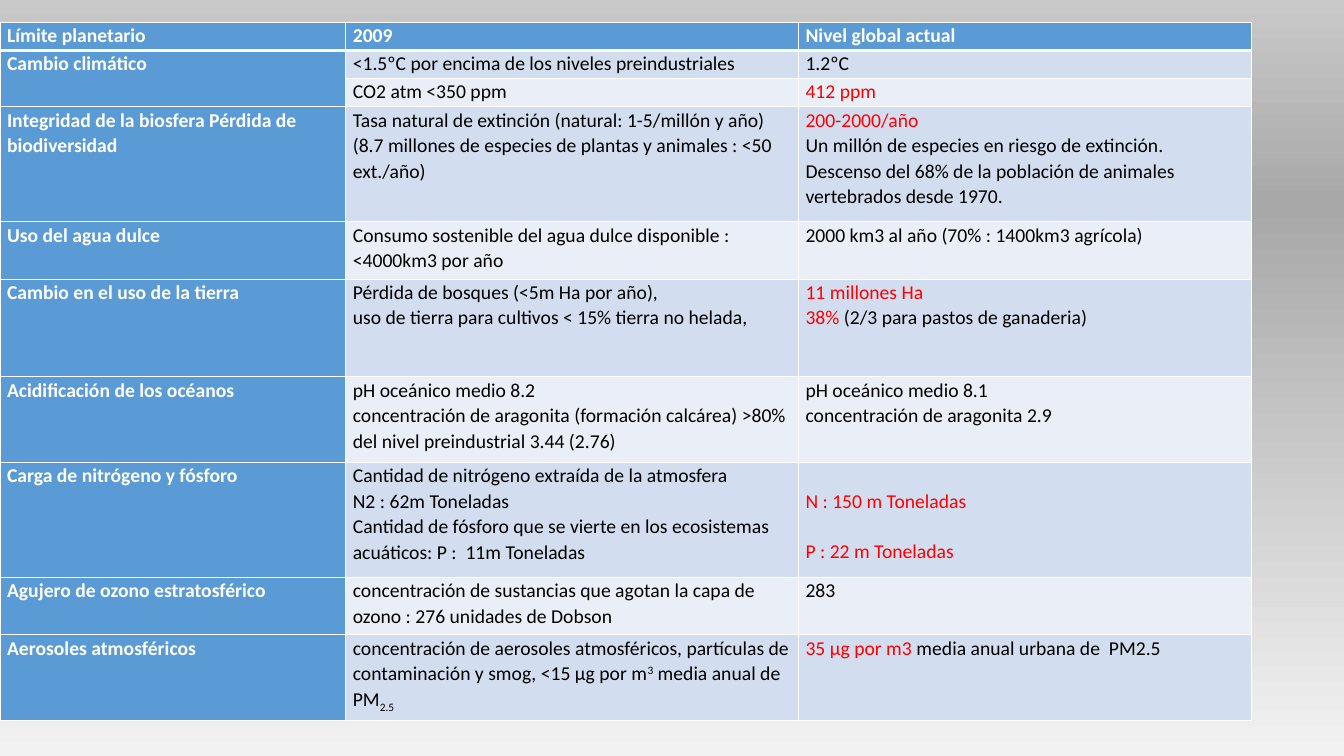
from copy import deepcopy
from dataclasses import dataclass

from lxml.etree import SubElement
from pptx import Presentation
from pptx.dml.color import RGBColor
from pptx.oxml.ns import qn
from pptx.util import Inches, Pt


@dataclass(frozen=True)
class Theme:
    font: str = "Calibri"
    size: int = 14
    line_spacing: float = 1.07
    white: str = "FFFFFF"
    black: str = "000000"
    alert: str = "FF0000"
    header: str = "5B9BD5"
    bands: tuple = ("EAEFF7", "D2DEEF")
    gradient: tuple = ((0, "F2F2F2"), (0.73, "A8A8A8"), (1, "C9C9C9"))
    thin: int = 1
    thick: int = 3


THEME = Theme()
ALERT = {"color": THEME.alert}
SUPERSCRIPT = {"baseline": "30000"}
SUBSCRIPT = {"baseline": "-25000"}

COLUMN_WIDTHS = (3.43, 4.49, 4.49)
ROW_HEIGHTS = (0.28, 0.28, 0.28, 1.14, 0.57, 0.97, 0.85, 1.14, 0.57, 0.85)
NITROGEN_ROW = 7

LIMITS = [
    [["Límite planetario"], ["2009"], ["Nivel global actual"]],
    [["Cambio climático"],
     ["<1.5ºC por encima de los niveles preindustriales"],
     ["1.2ºC"]],
    [[], ["CO2 atm <350 ppm"], [[("412 ppm", ALERT)]]],
    [["Integridad de la biosfera Pérdida de biodiversidad"],
     ["Tasa natural de extinción (natural: 1-5/millón y año)",
      "(8.7 millones de especies de plantas y animales : <50 ext./año)"],
     [[("200-2000/año", ALERT)],
      "Un millón de especies en riesgo de extinción.",
      "Descenso del 68% de la población de animales vertebrados desde 1970."]],
    [["Uso del agua dulce"],
     ["Consumo sostenible del agua dulce disponible : <4000km3 por año"],
     ["2000 km3 al año (70% : 1400km3 agrícola)"]],
    [["Cambio en el uso de la tierra"],
     ["Pérdida de bosques (<5m Ha por año),",
      "uso de tierra para cultivos < 15% tierra no helada,"],
     [[("11 millones Ha", ALERT)],
      [("38%", ALERT), (" (2/3 para pastos de ganaderia)", {})]]],
    [["Acidificación de los océanos"],
     ["pH oceánico medio 8.2",
      "concentración de aragonita (formación calcárea) >80% del nivel preindustrial 3.44 (2.76)"],
     ["pH oceánico medio 8.1", "concentración de aragonita 2.9"]],
    [["Carga de nitrógeno y fósforo"],
     ["Cantidad de nitrógeno extraída de la atmosfera",
      "N2 : 62m Toneladas",
      "Cantidad de fósforo que se vierte en los ecosistemas acuáticos: P :  11m Toneladas"],
     [[("N : 150 m Toneladas", ALERT)], [("P : 22 m Toneladas", ALERT)]]],
    [["Agujero de ozono estratosférico"],
     ["concentración de sustancias que agotan la capa de ozono : 276 unidades de Dobson"],
     ["283"]],
    [["Aerosoles atmosféricos"],
     [[("concentración de aerosoles atmosféricos, partículas de contaminación y smog, <15 μg por m", {}),
       ("3", SUPERSCRIPT), (" media anual de  PM", {}), ("2.5", SUBSCRIPT)]],
     [[("35 μg por m3", ALERT), (" media anual urbana de  PM2.5", {})]]],
]


class SlideBuilder:
    def __init__(self, slide, theme):
        self.slide = slide
        self.theme = theme

    def background(self):
        fill = self.slide.background.fill
        fill.gradient()
        fill.gradient_angle = 90
        stop_list = next(self.slide.element.iter(qn("a:gsLst")))
        stop_list.append(deepcopy(stop_list[0]))
        for stop, (position, color) in zip(fill.gradient_stops, self.theme.gradient):
            stop.position = position
            stop.color.rgb = RGBColor.from_string(color)

    def borders(self, cell, row):
        properties = cell._tc.get_or_add_tcPr()
        thick_side = {0: "lnB", 1: "lnT"}.get(row)
        for side in ("lnL", "lnR", "lnT", "lnB"):
            width = self.theme.thick if side == thick_side else self.theme.thin
            line = SubElement(properties, qn(f"a:{side}"), w=str(Pt(width)))
            solid = SubElement(line, qn("a:solidFill"))
            SubElement(solid, qn("a:srgbClr"), val=self.theme.white)

    def style_font(self, font, color, bold):
        formats = {"name": self.theme.font, "size": Pt(self.theme.size), "bold": bold}
        for name, value in formats.items():
            setattr(font, name, value)
        font.color.rgb = RGBColor.from_string(color)

    def text(self, cell, paragraphs, color, bold):
        frame = cell.text_frame
        for index, content in enumerate(paragraphs):
            paragraph = frame.add_paragraph() if index else frame.paragraphs[0]
            paragraph.line_spacing = self.theme.line_spacing
            runs = [(content, {})] if isinstance(content, str) else content
            for text, style in runs:
                run = paragraph.add_run()
                run.text = text
                self.style_font(run.font, style.get("color", color), bold)
                if "baseline" in style:
                    run._r.get_or_add_rPr().set("baseline", style["baseline"])

    def cell(self, cell, row, column, paragraphs):
        heading = row == 0 or column == 0
        margins = {"margin_left": Inches(0.07), "margin_right": Inches(0.07),
                   "margin_top": 0, "margin_bottom": 0}
        for name, value in margins.items():
            setattr(cell, name, value)
        self.borders(cell, row)
        cell.fill.solid()
        color = self.theme.header if heading else self.theme.bands[row % 2]
        cell.fill.fore_color.rgb = RGBColor.from_string(color)
        self.text(cell, paragraphs, self.theme.white if heading else self.theme.black, heading)

    def table(self, left, top, widths, heights, rows):
        table = self.slide.shapes.add_table(
            len(heights), len(widths), Inches(left), Inches(top),
            Inches(sum(widths)), Inches(sum(heights))).table
        for column, width in zip(table.columns, widths):
            column.width = Inches(width)
        for row, height in zip(table.rows, heights):
            row.height = Inches(height)
        for row, contents in enumerate(rows):
            for column, paragraphs in enumerate(contents):
                self.cell(table.cell(row, column), row, column, paragraphs)
        return table

    def open_lines(self, cell, gap):
        cell.margin_top = gap
        for paragraph in cell.text_frame.paragraphs[1:]:
            paragraph.space_before = gap


def main():
    presentation = Presentation()
    presentation.slide_width = Inches(13.33)
    presentation.slide_height = Inches(7.5)
    slide = presentation.slides.add_slide(presentation.slide_layouts[6])
    builder = SlideBuilder(slide, THEME)
    builder.background()
    table = builder.table(0, 0.22, COLUMN_WIDTHS, ROW_HEIGHTS, LIMITS)
    table.cell(1, 0).merge(table.cell(2, 0))
    builder.open_lines(table.cell(NITROGEN_ROW, 2), Inches(0.25))
    presentation.save("out.pptx")


if __name__ == "__main__":
    main()
